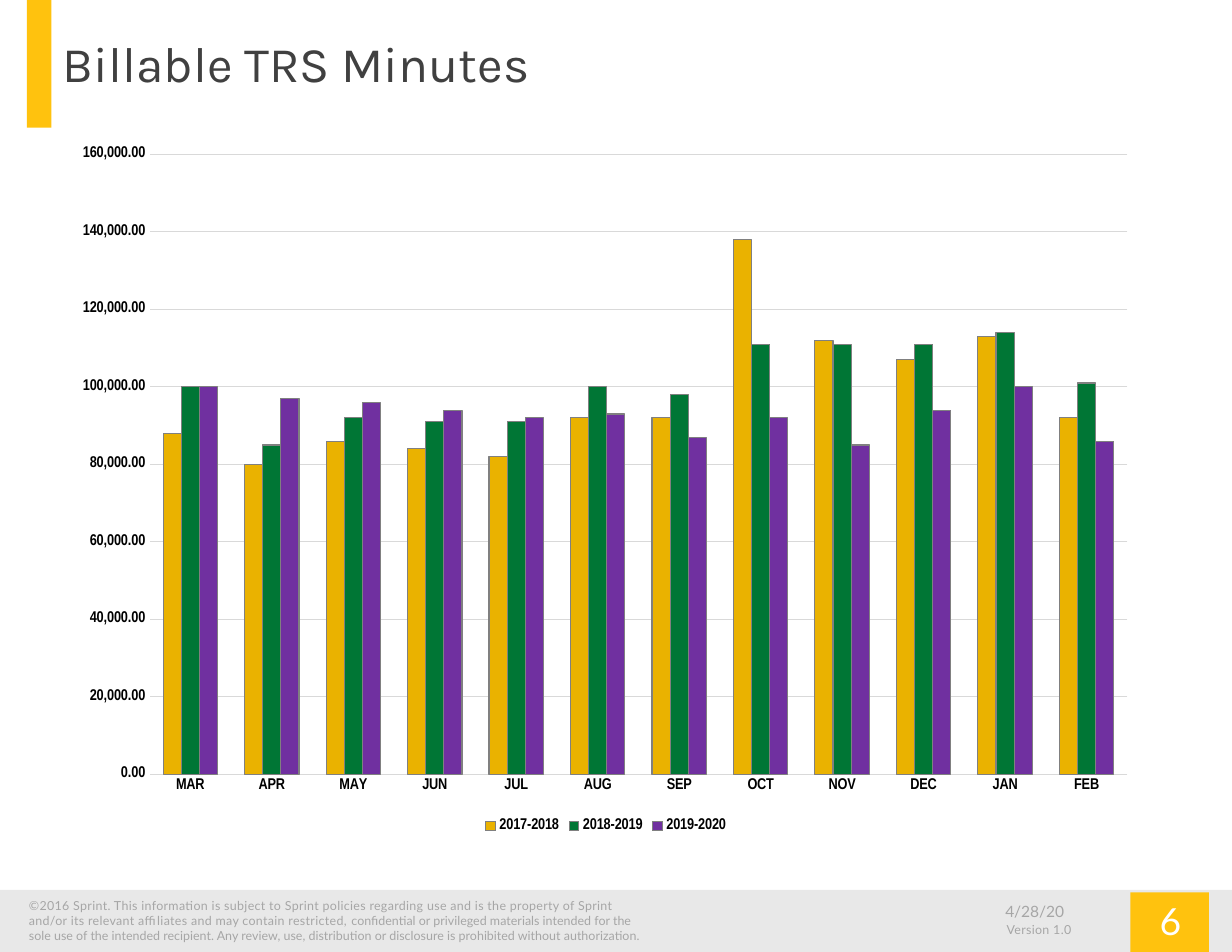
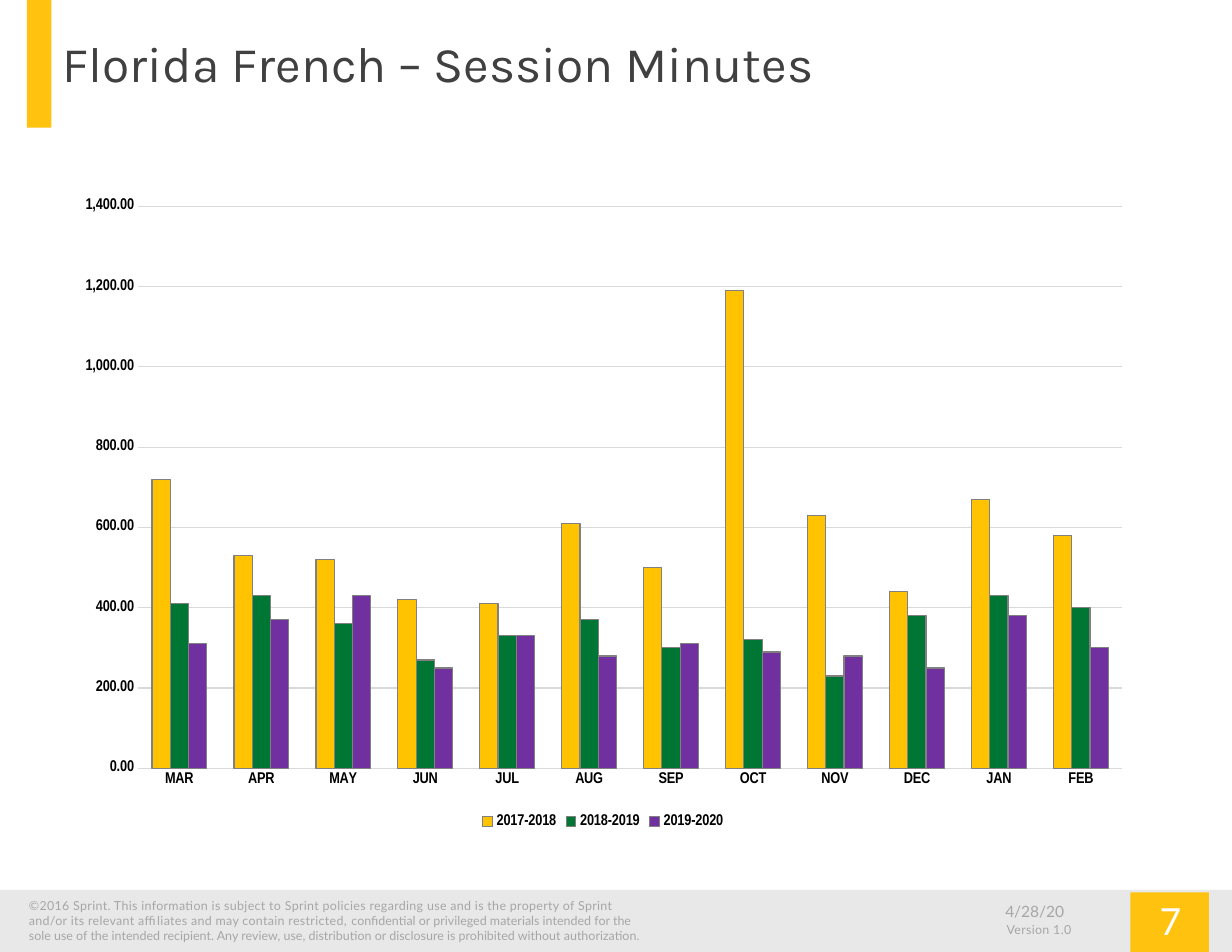
from lxml import etree
from pptx import Presentation
from pptx import util as u
from pptx.chart import data as chart_data
from pptx.dml.color import RGBColor
from pptx.enum import chart as charts, shapes, text
from pptx.oxml import ns

Pt = u.Pt

COLORS = {
    "page": "FFFFFF", "band": "FFC20E", "footer": "E8E8E8", "title": "404040",
    "muted": "A6A6A6", "axis": "000000", "grid": "D9D9D9", "outline": "808080",
    "gold": "EAB200", "yellow": "FFC301", "green": "007635", "purple": "7030A0",
}
TITLE_FONT, BODY_FONT, AXIS_FONT = "Karla", "Lato", "Arial Narrow"
MONTHS = ["MAR", "APR", "MAY", "JUN", "JUL", "AUG",
          "SEP", "OCT", "NOV", "DEC", "JAN", "FEB"]
YEARS = ["2017-2018", "2018-2019", "2019-2020"]

COPYRIGHT = [
    ("©2016 Sprint. This information is subject to Sprint policies regarding use "
     "and is the property of Sprint and/or its relevant affiliates and may contain "
     "restricted, ", 0.2),
    ("confidential or privileged materials intended for the sole use of the intended "
     "recipient. Any review, use, distribution or disclosure is prohibited without "
     "authorization.", 0),
]

# Boxes are left, top, width, height in points; plot is a share of the chart area.
SLIDES = [
    {
        "number": "6",
        "title": "Billable TRS Minutes",
        "title_width": 672.5,
        "chart_box": (40.3, 85.7, 698.4, 452.9),
        "plot": (0.08, 0.03, 0.9, 0.88),
        "format": "#,##0.00;[Red]#,##0.00",
        "top": 160000, "step": 20000,
        "colors": ["gold", "green", "purple"],
        "minutes": [
            [88000, 80000, 86000, 84000, 82000, 92000,
             92000, 138000, 112000, 107000, 113000, 92000],
            [100000, 85000, 92000, 91000, 91000, 100000,
             98000, 111000, 111000, 111000, 114000, 101000],
            [100000, 97000, 96000, 94000, 92000, 93000,
             87000, 92000, 85000, 94000, 100000, 86000],
        ],
    },
    {
        "number": "7",
        "title": "Florida French – Session Minutes",
        "title_width": 659.5,
        "chart_box": (40.3, 120.2, 694.8, 415.4),
        "plot": (0.07, 0.03, 0.91, 0.87),
        "format": "#,##0.00",
        "top": 1400, "step": 200,
        "colors": ["yellow", "green", "purple"],
        "minutes": [
            [720, 530, 520, 420, 410, 610, 500, 1190, 630, 440, 670, 580],
            [410, 430, 360, 270, 330, 370, 300, 320, 230, 380, 430, 400],
            [310, 370, 430, 250, 330, 280, 310, 290, 280, 250, 380, 300],
        ],
    },
]


def points(box):
    return [Pt(length) for length in box]


def rgb(color):
    return RGBColor.from_string(COLORS[color])


def style(font, name, size, color, bold=False):
    font.name, font.size, font.bold = name, Pt(size), bold
    font.color.rgb = rgb(color)


def add_band(slide, box, color):
    band = slide.shapes.add_shape(shapes.MSO_SHAPE.RECTANGLE, *points(box))
    band.shadow.inherit = False
    band.fill.solid()
    band.fill.fore_color.rgb = rgb(color)
    band.line.fill.background()


def add_label(slide, box, runs, size, color="muted", align=text.PP_ALIGN.LEFT):
    """Add a one-paragraph text box; runs are (wording, letter spacing) pairs."""
    frame = slide.shapes.add_textbox(*points(box)).text_frame
    frame.word_wrap = True
    paragraph = frame.paragraphs[0]
    paragraph.alignment = align
    for wording, spacing in runs:
        run = paragraph.add_run()
        run.text = wording
        style(run.font, BODY_FONT, size, color)
        if spacing:
            run._r.get_or_add_rPr().set("spc", str(round(spacing * 100)))


def add_frame(slide, number):
    """Add the bands and footer that every slide carries."""
    add_band(slide, (17.3, 0, 15.8, 82), "band")
    add_band(slide, (0, 572, 792, 40), "footer")
    add_band(slide, (726.6, 573.6, 50.6, 38.4), "band")
    add_label(slide, (11.5, 573.6, 414, 46), COPYRIGHT, 8)
    add_label(slide, (702.7, 573.6, 99.4, 34.6), [(number, 0)], 24, "page",
              text.PP_ALIGN.CENTER)
    add_label(slide, (565.2, 576, 126, 19.4), [("4/28/20", 0)], 10,
              align=text.PP_ALIGN.RIGHT)
    add_label(slide, (640, 589, 98, 17.3), [("Version 1.0", 0.2)], 8)


def set_title(slide, wording, width):
    title = slide.shapes.title
    title.left, title.top, title.width, title.height = points((40.3, 7.2, width, 66.2))
    frame = title.text_frame
    frame.margin_left = frame.margin_right = frame.margin_top = frame.margin_bottom = 0
    frame.vertical_anchor = text.MSO_ANCHOR.MIDDLE
    frame.word_wrap = True
    paragraph = frame.paragraphs[0]
    paragraph.alignment = text.PP_ALIGN.LEFT
    run = paragraph.add_run()
    run.text = wording
    style(run.font, TITLE_FONT, 32, "title")


def place_plot(chart, shares):
    """Fix the inner plot area at the given shares of the chart."""
    plot_area = chart._chartSpace.chart.plotArea
    for old in plot_area.findall(ns.qn("c:layout")):
        plot_area.remove(old)
    layout = etree.Element(ns.qn("c:layout"))
    manual = etree.SubElement(layout, ns.qn("c:manualLayout"))
    settings = [("layoutTarget", "inner"), ("xMode", "edge"), ("yMode", "edge")]
    settings += zip("xywh", shares)
    for tag, value in settings:
        etree.SubElement(manual, ns.qn("c:" + tag)).set("val", str(value))
    plot_area.insert(0, layout)


def add_minutes_chart(slide, content):
    data = chart_data.CategoryChartData(number_format=content["format"])
    data.categories = MONTHS
    for year, minutes in zip(YEARS, content["minutes"]):
        data.add_series(year, minutes)
    chart = slide.shapes.add_chart(charts.XL_CHART_TYPE.COLUMN_CLUSTERED,
                                   *points(content["chart_box"]), data).chart
    chart.has_title = False
    style(chart.font, BODY_FONT, 10, "axis")
    place_plot(chart, content["plot"])

    columns = chart.plots[0]
    columns.gap_width, columns.overlap = 150, 0
    columns.vary_by_categories = False
    for series, color in zip(columns.series, content["colors"]):
        series.format.fill.solid()
        series.format.fill.fore_color.rgb = rgb(color)
        series.format.line.color.rgb = rgb("outline")
        series.format.line.width = Pt(0.75)

    for axis in (chart.category_axis, chart.value_axis):
        axis.major_tick_mark = axis.minor_tick_mark = charts.XL_TICK_MARK.NONE
        axis.format.line.fill.background()
        style(axis.tick_labels.font, AXIS_FONT, 10, "axis", bold=True)
    scale = chart.value_axis
    scale.minimum_scale, scale.maximum_scale = 0, content["top"]
    scale.major_unit = content["step"]
    scale.tick_labels.number_format = content["format"]
    scale.tick_labels.number_format_is_linked = False
    scale.has_major_gridlines = True
    scale.major_gridlines.format.line.color.rgb = rgb("grid")
    scale.major_gridlines.format.line.width = Pt(0.75)

    chart.has_legend = True
    chart.legend.position = charts.XL_LEGEND_POSITION.BOTTOM
    chart.legend.include_in_layout = False
    style(chart.legend.font, AXIS_FONT, 10, "axis", bold=True)


def main():
    deck = Presentation()
    deck.slide_width, deck.slide_height = Pt(792), Pt(612)
    title_only = deck.slide_layouts[5]
    for content in SLIDES:
        slide = deck.slides.add_slide(title_only)
        slide.background.fill.solid()
        slide.background.fill.fore_color.rgb = rgb("page")
        add_frame(slide, content["number"])
        set_title(slide, content["title"], content["title_width"])
        add_minutes_chart(slide, content)
    deck.save("out.pptx")


if __name__ == "__main__":
    main()
